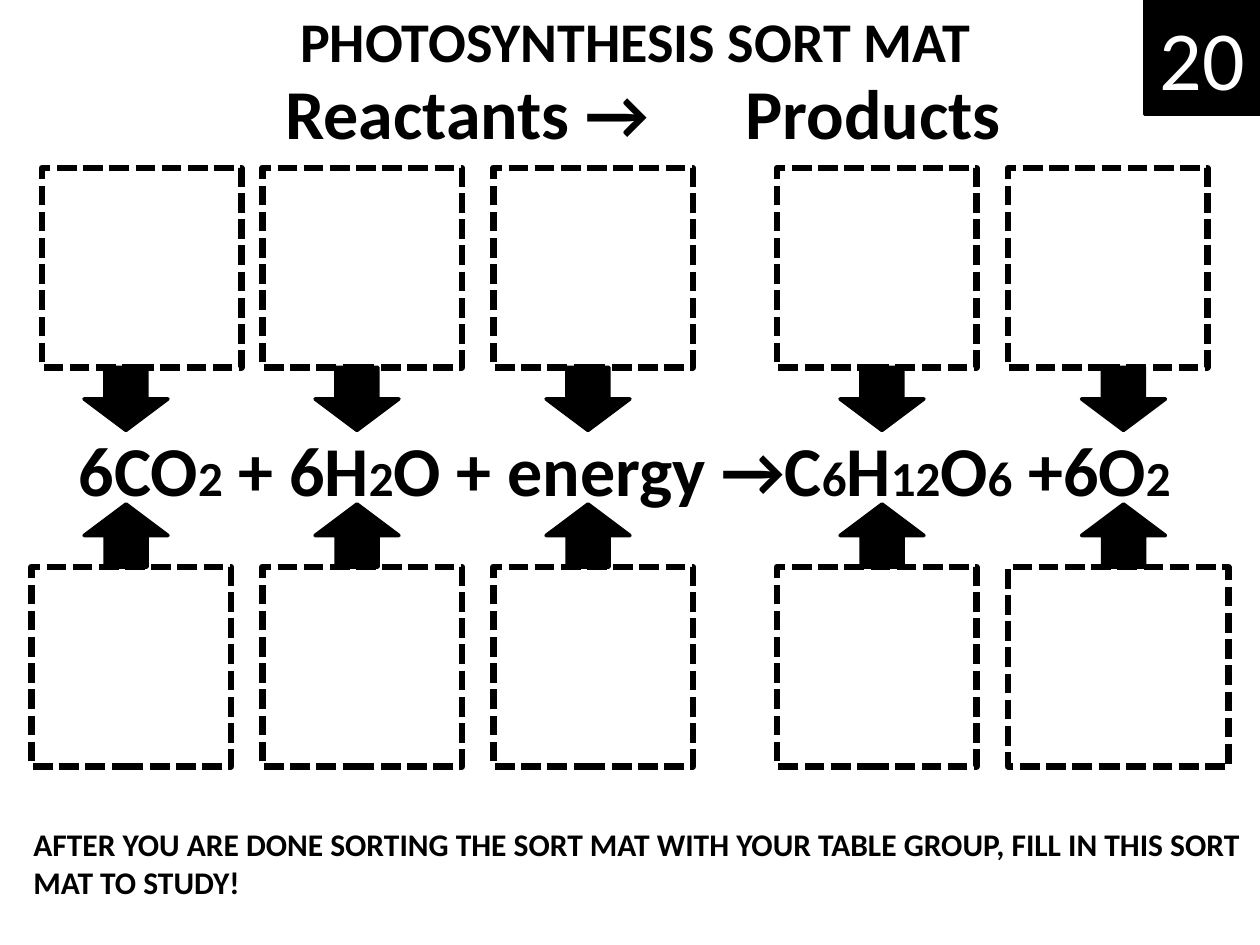
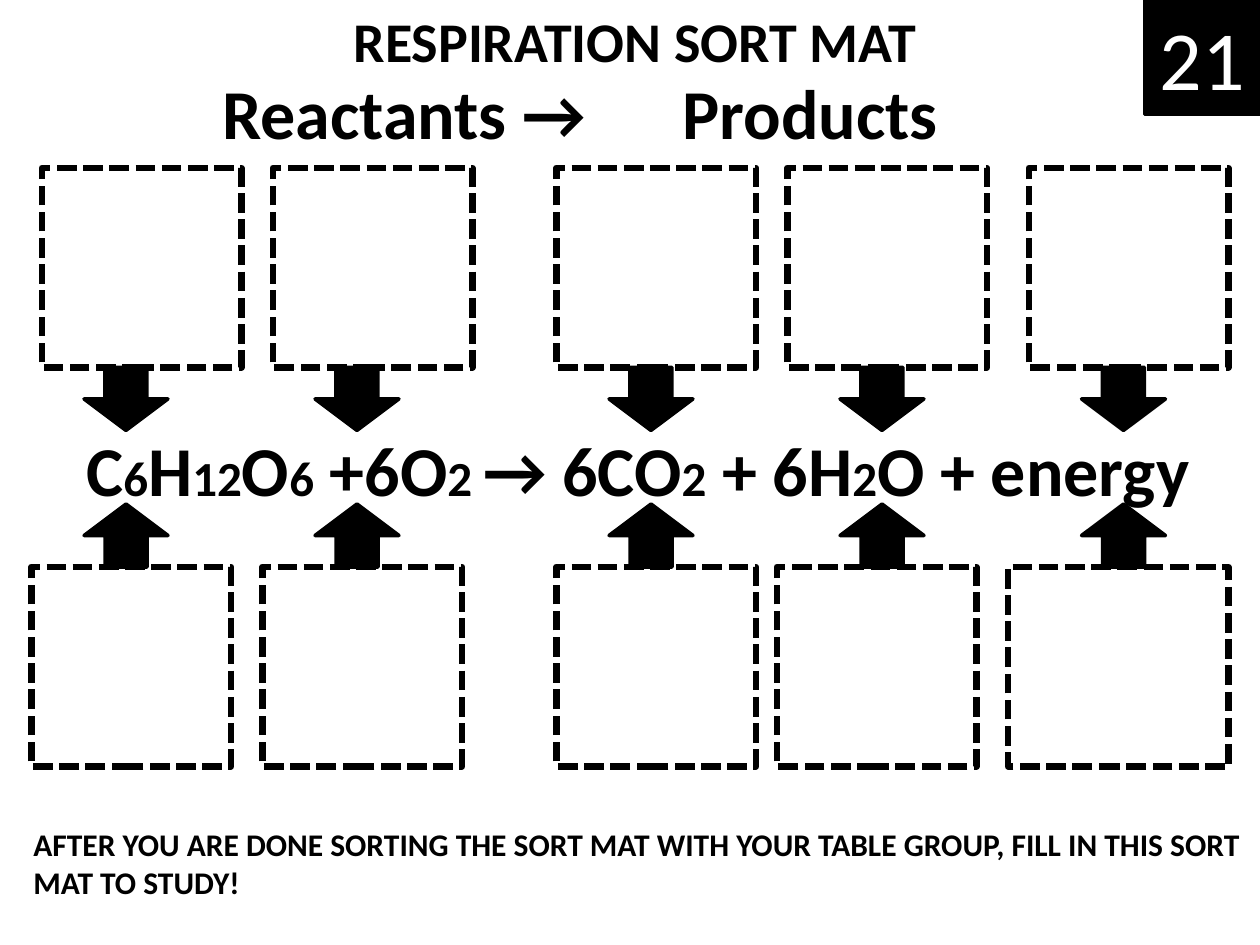
"""Build two sort mats, for photosynthesis and for respiration."""
import pptx
import pptx.dml.color
import pptx.enum.dml
import pptx.enum.shapes
import pptx.enum.text
import pptx.oxml.ns
import pptx.util
from lxml import etree

Pt = pptx.util.Pt
SHAPES = pptx.enum.shapes.MSO_SHAPE
ALIGN = pptx.enum.text.PP_ALIGN
COLOURS = {"ink": "000000", "paper": "FFFFFF"}
FRAME_FORMAT = {
    "word_wrap": True,
    "auto_size": pptx.enum.text.MSO_AUTO_SIZE.NONE,
    "vertical_anchor": pptx.enum.text.MSO_ANCHOR.TOP,
}
CARD_SIZE = 114
LAST_CARD_WIDTH = 126
TOP_ROW, BOTTOM_ROW = 96, 324
DOWN_ROW, UP_ROW = 210, 288
HEADING_INSET, PRODUCTS_TAB = 127, 263
INSTRUCTION = (
    "AFTER YOU ARE DONE SORTING THE SORT MAT WITH YOUR TABLE GROUP, "
    "FILL IN THIS SORT MAT TO STUDY!"
)
MATS = [
    {
        "title": "PHOTOSYNTHESIS SORT MAT",
        "number": "20",
        "heading_left": 36,
        "equation": "6CO_2_ + 6H_2_O + energy →C_6_H_12_O_6_ +6O_2",
        "equation_left": -30,
        "top_cards": [24, 150, 282, 444, 576],
        "bottom_cards": [18, 150, 282, 444, 576],
        "arrows": [48, 180, 312, 480, 618],
    },
    {
        "title": "RESPIRATION SORT MAT",
        "number": "21",
        "heading_left": 0,
        "equation": "C_6_H_12_O_6_ +6O_2 _→ 6CO_2_ + 6H_2_O + energy ",
        "equation_left": -18,
        "top_cards": [24, 156, 318, 450, 588],
        "bottom_cards": [18, 150, 318, 444, 576],
        "arrows": [48, 180, 348, 480, 618],
    },
]


def set_all(target, values):
    for name, value in values.items():
        setattr(target, name, value)


def colour(name):
    return pptx.dml.color.RGBColor.from_string(COLOURS[name])


def write(frame, pieces, align=ALIGN.CENTER, ink="ink", bold=True):
    set_all(frame, FRAME_FORMAT)
    para = frame.paragraphs[0]
    para.alignment = align
    for text, size in pieces:
        span = para.add_run()
        span.text = text
        set_all(span.font, {"name": "Calibri", "size": Pt(size), "bold": bold})
        span.font.color.rgb = colour(ink)
    return para


def add_title(page, text):
    title = page.shapes.title
    place = {"left": 90, "top": 0, "width": 546, "height": 46}
    set_all(title, {name: Pt(value) for name, value in place.items()})
    write(title.text_frame, [(text, 32)])


def add_text(page, bounds, pieces, align=ALIGN.CENTER):
    box = page.shapes.add_textbox(*map(Pt, bounds))
    write(box.text_frame, pieces, align)
    return box


def add_heading(page, left):
    box = add_text(page, (left, 36, 666, 55.5), [("Reactants →\tProducts", 40)], ALIGN.LEFT)
    box.text_frame.margin_left = Pt(HEADING_INSET)
    properties = box.text_frame.paragraphs[0]._p.get_or_add_pPr()
    tabs = etree.SubElement(properties, pptx.oxml.ns.qn("a:tabLst"))
    etree.SubElement(
        tabs, pptx.oxml.ns.qn("a:tab"), pos=str(Pt(PRODUCTS_TAB)), algn="l"
    )


def add_equation(page, left, equation):
    parts = equation.split("_")
    pieces = [(part, 28 if index % 2 else 40) for index, part in enumerate(parts)]
    add_text(page, (left, 240, 774, 55.5), pieces)


def add_block(page, kind, bounds, fill="ink", line_width=2):
    block = page.shapes.add_shape(kind, *map(Pt, bounds))
    block.shadow.inherit = False
    block.fill.solid()
    block.fill.fore_color.rgb = colour(fill)
    block.line.color.rgb = colour("ink")
    block.line.width = Pt(line_width)
    return block


def add_card(page, left, top, width=CARD_SIZE):
    card = add_block(page, SHAPES.RECTANGLE, (left, top, width, CARD_SIZE), "paper", 3.75)
    card.line.dash_style = pptx.enum.dml.MSO_LINE.SQUARE_DOT


def add_arrow(page, left, top, rotation=0):
    arrow = add_block(page, SHAPES.DOWN_ARROW, (left, top, 48, 36))
    arrow.rotation = rotation


def add_number(page, number):
    badge = add_block(page, SHAPES.RECTANGLE, (654, 0, 66, 65.5))
    write(badge.text_frame, [(number, 48)], ink="paper", bold=False)


def add_mat(deck, mat):
    page = deck.slides.add_slide(deck.slide_layouts[5])
    add_title(page, mat["title"])
    for left in mat["top_cards"]:
        add_card(page, left, TOP_ROW)
    *lefts, last_left = mat["bottom_cards"]
    for left in lefts:
        add_card(page, left, BOTTOM_ROW)
    add_card(page, last_left, BOTTOM_ROW, LAST_CARD_WIDTH)
    add_equation(page, mat["equation_left"], mat["equation"])
    for left in mat["arrows"]:
        add_arrow(page, left, DOWN_ROW)
        add_arrow(page, left, UP_ROW, 180)
    add_text(page, (12, 468, 708, 51), [(INSTRUCTION, 18)], ALIGN.LEFT)
    add_number(page, mat["number"])
    add_heading(page, mat["heading_left"])


def main():
    deck = pptx.Presentation()
    set_all(deck, {"slide_width": Pt(720), "slide_height": Pt(540)})
    for mat in MATS:
        add_mat(deck, mat)
    deck.save("out.pptx")


if __name__ == "__main__":
    main()
